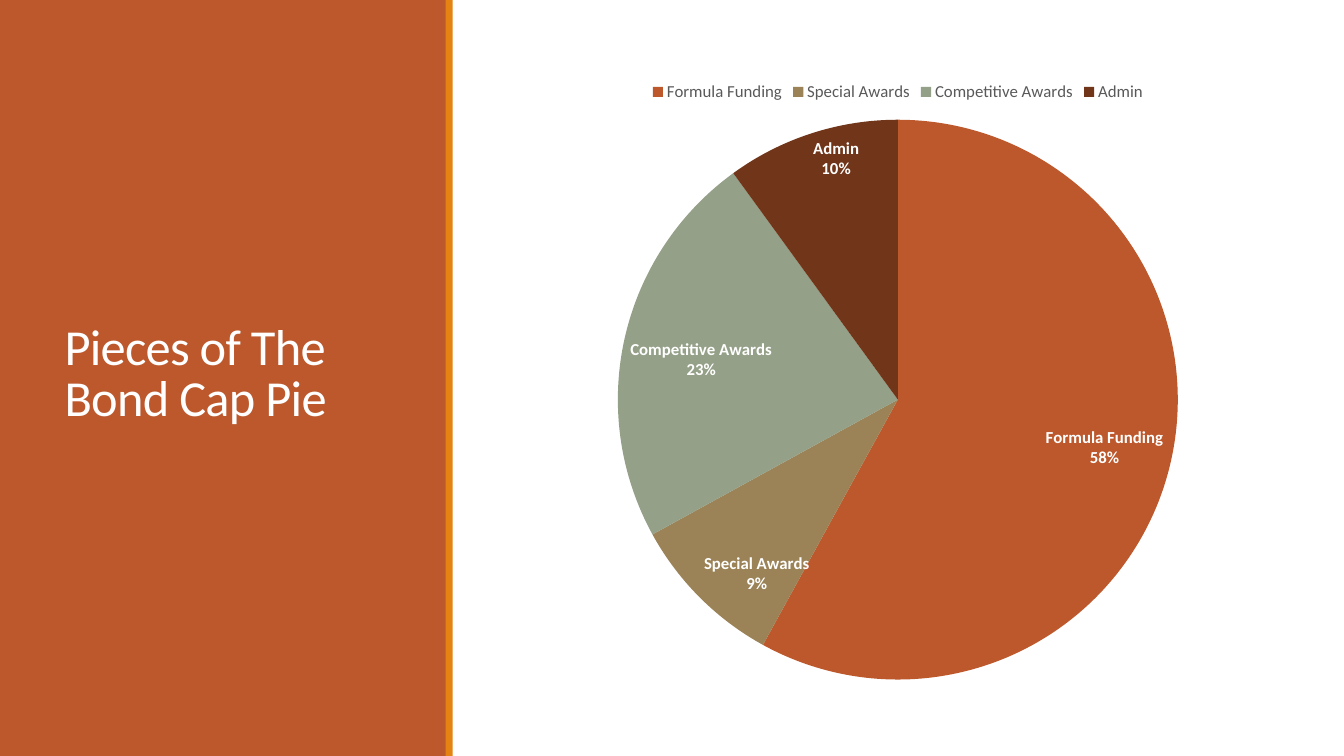
"""Build the slide on the pieces of the bond cap pie."""
from dataclasses import dataclass

from pptx import Presentation
from pptx.chart.data import CategoryChartData
from pptx.dml.color import RGBColor
from pptx.enum.chart import XL_CHART_TYPE, XL_LABEL_POSITION, XL_LEGEND_POSITION
from pptx.enum.shapes import MSO_SHAPE
from pptx.enum.text import MSO_ANCHOR, MSO_AUTO_SIZE, PP_ALIGN
from pptx.util import Inches, Pt


@dataclass(frozen=True)
class Theme:
    font: str = "Calibri"
    rust: str = "BD582C"
    gold: str = "E48312"
    tan: str = "9B8357"
    sage: str = "94A088"
    brown: str = "71351A"
    white: str = "FFFFFF"
    gray: str = "595959"
    head: int = 36
    note: int = 12


def style(font, size, color, bold=False):
    font.name, font.size, font.bold = look.font, Pt(size), bold
    font.color.rgb = RGBColor.from_string(color)


def write(frame, text, size, color, lead=1.0, track=0):
    frame.word_wrap = True
    frame.auto_size = MSO_AUTO_SIZE.NONE
    frame.vertical_anchor = MSO_ANCHOR.MIDDLE
    para = frame.paragraphs[0]
    para.alignment, para.line_spacing = PP_ALIGN.LEFT, lead
    run = para.add_run()
    run.text = text
    style(run.font, size, color)
    run.font._element.set("spc", str(track))


look = Theme()
deck = Presentation()
deck.slide_width, deck.slide_height = Inches(13.33), Inches(7.5)
slide = deck.slides.add_slide(deck.slide_layouts[5])
slide.background.fill.solid()
slide.background.fill.fore_color.rgb = RGBColor.from_string(look.white)

for left, width, color in [(0, 4.43, look.rust), (4.42, 0.07, look.gold)]:
    band = slide.shapes.add_shape(
        MSO_SHAPE.RECTANGLE, Inches(left), 0, Inches(width), deck.slide_height)
    band.shadow.inherit = False
    band.fill.solid()
    band.fill.fore_color.rgb = RGBColor.from_string(color)
    band.line.fill.background()

title = slide.shapes.title
title.left, title.top = Inches(0.54), Inches(0.57)
title.width, title.height = Inches(3.37), Inches(6.31)
write(title.text_frame, "Pieces of The Bond Cap Pie",
      size=look.head, color=look.white, lead=0.85, track=-50)
title.element.getparent().append(title.element)

parts = [
    ("Formula Funding", 58, look.rust),
    ("Special Awards", 9, look.tan),
    ("Competitive Awards", 23, look.sage),
    ("Admin", 10, look.brown),
]
data = CategoryChartData()
data.categories = [name for name, share, color in parts]
data.add_series("Series 1", [share for name, share, color in parts])
chart = slide.shapes.add_chart(
    XL_CHART_TYPE.PIE, Inches(5.19), Inches(0.7), Inches(7.43), Inches(6.18), data).chart
chart.has_title = False
style(chart.font, look.note, look.gray)
chart.has_legend = True
chart.legend.position = XL_LEGEND_POSITION.TOP
chart.legend.include_in_layout = False
style(chart.legend.font, look.note, look.gray)

plot = chart.plots[0]
plot.vary_by_categories = True
for spot, (name, share, color) in enumerate(parts):
    slice = plot.series[0].points[spot].format
    slice.fill.solid()
    slice.fill.fore_color.rgb = RGBColor.from_string(color)
    slice.line.fill.background()

tags = plot.series[0].data_labels
tags.show_value = False
tags.show_category_name = tags.show_percentage = True
tags.number_format, tags.number_format_is_linked = "0%", False
tags.position = XL_LABEL_POSITION.INSIDE_END
style(tags.font, look.note, look.white, bold=True)

deck.save("out.pptx")
